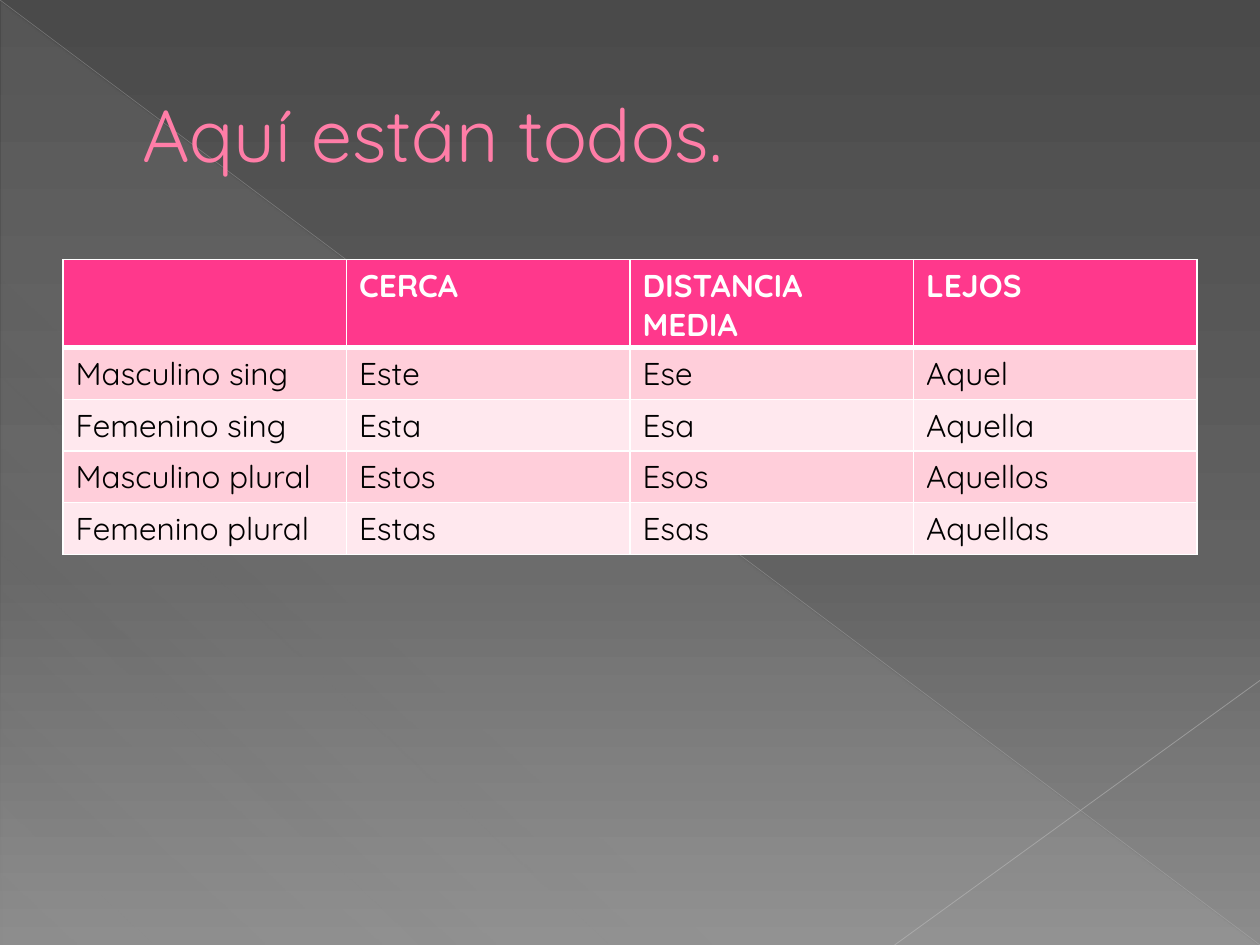
from lxml.etree import SubElement as Sub
from pptx import Presentation
from pptx.dml.color import RGBColor as RGB
from pptx.enum.shapes import MSO_CONNECTOR as Conn, MSO_SHAPE as Shape
from pptx.enum.text import MSO_ANCHOR as Anchor
from pptx.oxml.ns import qn
from pptx.util import Inches, Pt

WIDE, HIGH = Inches(10), Inches(7.5)
FONT = "Quicksand"
WHITE = RGB(0xFF, 0xFF, 0xFF)
BLACK = RGB(0, 0, 0)
ROSE = RGB(0xFF, 0x7D, 0xA7)
WINE = RGB(0xB1, 0x27, 0x61)
PINK = RGB(0xFF, 0x38, 0x8C)
BANDS = RGB(0xFF, 0xCE, 0xDA), RGB(0xFF, 0xE8, 0xEE)
MIST = RGB(0xD2, 0xD2, 0xD2)
SILVER = RGB(0xBF, 0xBF, 0xBF)
ASH = RGB(0xC6, 0xC6, 0xC6)
DARK = RGB(0x4A, 0x4A, 0x4A)
MID = RGB(0x62, 0x62, 0x62)
LIGHT = RGB(0x8C, 0x8C, 0x8C)

ROWS = [
    ["", "CERCA", "DISTANCIA MEDIA", "LEJOS"],
    ["Masculino sing", "Este", "Ese", "Aquel"],
    ["Femenino sing", "Esta", "Esa", "Aquella"],
    ["Masculino plural", "Estos", "Esos", "Aquellos"],
    ["Femenino plural", "Estas", "Esas", "Aquellas"],
]


def add_color(node, color, alpha=100):
    tone = Sub(node, qn("a:srgbClr"), val=str(color))
    if alpha < 100:
        Sub(tone, qn("a:alpha"), val=str(alpha * 1000))


def blend(fill, root, stops, angle):
    """Fill with (place, colour, opacity) stops, turned clockwise by angle."""
    fill.gradient()
    grad = root.find(".//" + qn("a:gradFill"))
    group = grad.find(qn("a:gsLst"))
    for old in list(group):
        group.remove(old)
    for place, color, alpha in stops:
        stop = Sub(group, qn("a:gs"), pos=str(place * 1000))
        add_color(stop, color, alpha)
    grad.find(qn("a:lin")).set("ang", str(angle * 60000))


def add_line(slide, start, end, color, width, alpha):
    """Draw a faint line between two points given as shares of the slide."""
    ends = [int(share * size) for point in (start, end)
            for share, size in zip(point, (WIDE, HIGH))]
    line = slide.shapes.add_connector(Conn.STRAIGHT, *ends)
    line.line.color.rgb = color
    line.line.width = Pt(width)
    tone = line._element.spPr.find(".//" + qn("a:srgbClr"))
    Sub(tone, qn("a:alpha"), val=str(alpha * 1000))
    Sub(line._element.spPr, qn("a:effectLst"))


def add_run(para, text, size, color, bold=False):
    run = para.add_run()
    run.text = text
    font = run.font
    font.name, font.size, font.bold = FONT, Pt(size), bold
    font.color.rgb = color
    return run


def add_back(slide):
    blend(slide.background.fill, slide._element,
          [(0, DARK, 100), (60, MID, 100), (100, LIGHT, 100)], 90)
    wedge = slide.shapes.add_shape(Shape.RIGHT_TRIANGLE, Inches(0.01),
                                   Inches(0.02), Inches(9.98), Inches(7.48))
    wedge.shadow.inherit = False
    wedge.line.fill.background()
    blend(wedge.fill, wedge._element,
          [(0, MIST, 10), (70, MIST, 8), (100, MIST, 1)], 133)
    add_line(slide, (0, 0), (1, 1), SILVER, 0.39, 35)
    add_line(slide, (1, 0.72), (0.71, 1), ASH, 0.47, 45)


def add_title(slide, text):
    box = slide.shapes.add_textbox(Inches(0.5), Inches(0.29),
                                   Inches(9), Inches(1.53))
    frame = box.text_frame
    frame.word_wrap = True
    frame.vertical_anchor = Anchor.MIDDLE
    para = frame.paragraphs[0]
    para._p.get_or_add_pPr().set("marL", str(Inches(0.53)))
    props = add_run(para, text, 42, ROSE)._r.get_or_add_rPr()
    edge = Sub(props, qn("a:ln"), w=str(Pt(0.5)))
    add_color(Sub(edge, qn("a:solidFill")), WINE)
    props.insert(0, edge)


def add_edges(cell, base):
    """Rule a cell in white, with its bottom edge base points wide."""
    props = cell._tc.get_or_add_tcPr()
    for side, width in zip("LRTB", (1, 1, 1, base)):
        edge = Sub(props, qn("a:ln" + side), w=str(Pt(width)))
        add_color(Sub(edge, qn("a:solidFill")), WHITE)


def add_grid(slide, rows):
    table = slide.shapes.add_table(
        len(rows), len(rows[0]), Inches(0.5), Inches(2.06),
        Inches(9), Inches(0.41 * len(rows))).table
    for r, row in enumerate(rows):
        head = r == 0
        for c, text in enumerate(row):
            cell = table.cell(r, c)
            add_edges(cell, 3 if head else 1)
            cell.fill.solid()
            cell.fill.fore_color.rgb = PINK if head else BANDS[(r - 1) % 2]
            if text:
                add_run(cell.text_frame.paragraphs[0], text, 18,
                        WHITE if head else BLACK, head)


def main():
    deck = Presentation()
    deck.slide_width, deck.slide_height = WIDE, HIGH
    slide = deck.slides.add_slide(deck.slide_layouts[6])
    add_back(slide)
    add_title(slide, "Aquí están todos.")
    add_grid(slide, ROWS)
    deck.save("out.pptx")


if __name__ == "__main__":
    main()
